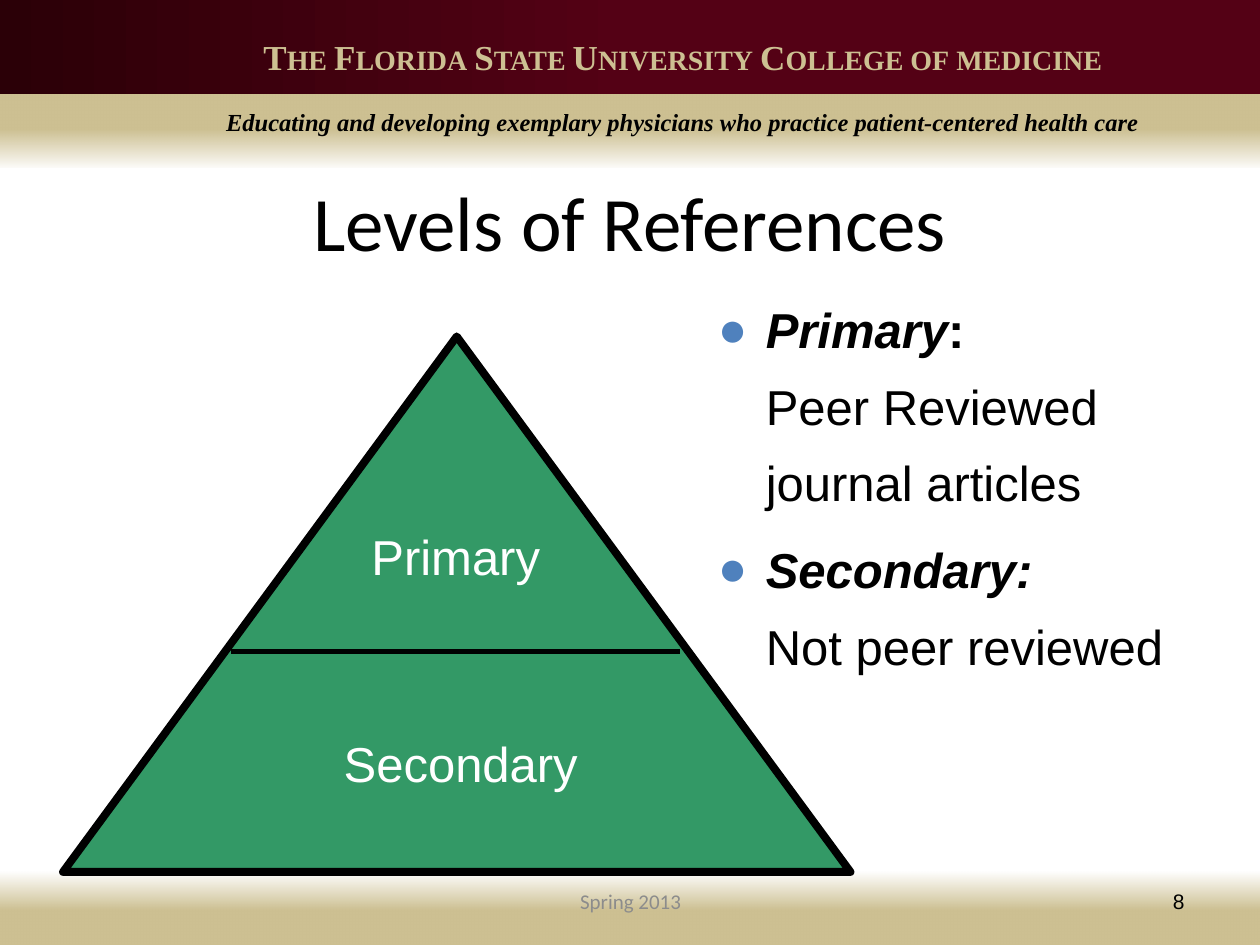
from lxml.etree import SubElement
from pptx import Presentation
from pptx.dml.color import RGBColor
from pptx.enum.shapes import MSO_CONNECTOR, MSO_SHAPE
from pptx.enum.text import MSO_ANCHOR, PP_ALIGN
from pptx.oxml import parse_xml
from pptx.oxml.ns import nsdecls, qn
from pptx.util import Inches, Pt

TAN, GREEN, BLACK, WHITE = "CDC092", "339966", "000000", "FFFFFF"
color = RGBColor.from_string


def write(shape, text, size, font, hue, align=PP_ALIGN.LEFT, anchor=MSO_ANCHOR.TOP, wrap=True):
    """Fill a shape with one uniformly formatted paragraph and return it."""
    frame = shape.text_frame
    frame.word_wrap = wrap
    frame.vertical_anchor = anchor
    para = frame.paragraphs[0]
    para.text = text
    para.alignment = align
    para.font.size = Pt(size)
    para.font.name = font
    para.font.color.rgb = color(hue)
    return para


deck = Presentation()
deck.slide_width, deck.slide_height = Inches(10), Inches(7.5)
page = deck.slides.add_slide(deck.slide_layouts[5])
shapes = page.shapes

# Full-width gradient bands: top, height, start %, start colour, end colour, end opacity %, angle
bands = [
    (0.75, 0.58, 47, TAN, TAN, 5, 90),
    (0, 0.75, 50, "540115", "2B0007", 100, 180),
    (6.92, 0.58, 47, TAN, TAN, 0, 270),
]
for top, height, start, first, last, opacity, angle in bands:
    band = shapes.add_shape(MSO_SHAPE.RECTANGLE, 0, Inches(top), Inches(10), Inches(height))
    band.shadow.inherit = False
    band.line.fill.background()
    gradient = parse_xml(
        f'<a:gradFill {nsdecls("a")} rotWithShape="1"><a:gsLst>'
        f'<a:gs pos="{start * 1000}"><a:srgbClr val="{first}"/></a:gs>'
        f'<a:gs pos="100000"><a:srgbClr val="{last}"><a:alpha val="{opacity * 1000}"/></a:srgbClr></a:gs>'
        f'</a:gsLst><a:lin ang="{angle * 60000}" scaled="0"/></a:gradFill>')
    band.fill.background()
    properties = band.fill._xPr
    properties.replace(properties.find(qn("a:noFill")), gradient)

# Header and footer text
box = shapes.add_textbox(Inches(0.42), Inches(0.23), Inches(10), Inches(0.44))
para = write(box, "The Florida State University College of medicine", 20,
             "Times New Roman", TAN, PP_ALIGN.CENTER)
para.font.bold = True
para.runs[0].font._element.set("cap", "small")

box = shapes.add_textbox(Inches(0.42), Inches(0.8), Inches(10), Inches(0.33))
para = write(box, "Educating and developing exemplary physicians who practice patient-centered health care",
             14, "Times New Roman", BLACK, PP_ALIGN.CENTER)
para.font.bold = para.font.italic = True

box = shapes.add_textbox(Inches(3.42), Inches(6.95), Inches(3.17), Inches(0.4))
write(box, "Spring 2013", 12, "Calibri", "8C8C8C", PP_ALIGN.CENTER, MSO_ANCHOR.MIDDLE)
box = shapes.add_textbox(Inches(7.17), Inches(6.95), Inches(2.33), Inches(0.4))
write(box, "8", 12, "Arial", BLACK, PP_ALIGN.RIGHT, MSO_ANCHOR.MIDDLE)

title = shapes.title
title.left, title.top, title.width, title.height = Inches(0.5), Inches(1.42), Inches(9), Inches(0.67)
write(title, "Levels of References", 44, "Calibri", BLACK, PP_ALIGN.CENTER, MSO_ANCHOR.MIDDLE)

# Definitions of the levels: term, colon in italics or not, description
levels = [
    ("Primary", False, "Peer Reviewed journal articles"),
    ("Secondary", True, "Not peer reviewed"),
]
box = shapes.add_textbox(Inches(5.6), Inches(2.19), Inches(4.4), Inches(3.3))
frame = box.text_frame
frame.word_wrap = True
for index, (term, slanted_colon, description) in enumerate(levels):
    para = frame.add_paragraph() if index else frame.paragraphs[0]
    para.line_spacing = 1.3
    para.space_before = Pt(6 if index else 0)
    settings = para._p.get_or_add_pPr()
    settings.set("marL", str(Inches(0.38)))
    settings.set("indent", str(-Inches(0.38)))
    SubElement(SubElement(settings, qn("a:buClr")), qn("a:srgbClr"), val="4F81BD")
    SubElement(settings, qn("a:buFont"), typeface="Arial")
    SubElement(settings, qn("a:buChar"), char="●")
    para.font.size = Pt(28)
    para.font.name = "Arial"
    para.font.color.rgb = color(BLACK)
    for text, bold, italic in [(term, True, True), (":", True, slanted_colon), (description, False, False)]:
        if text == description:
            para.add_line_break()
        span = para.add_run()
        span.text = text
        span.font.bold, span.font.italic = bold, italic

# Pyramid with its two levels
pyramid = shapes.add_shape(MSO_SHAPE.ISOSCELES_TRIANGLE, Inches(0.5), Inches(2.67), Inches(6.25), Inches(4.25))
pyramid.shadow.inherit = False
pyramid.fill.solid()
pyramid.fill.fore_color.rgb = color(GREEN)
pyramid.line.color.rgb = color(BLACK)
pyramid.line.width = Pt(4.5)

for label, left, top, width in [("Primary", 2.85, 4.13, 1.54), ("Secondary", 2.63, 5.77, 2.06)]:
    box = shapes.add_textbox(Inches(left), Inches(top), Inches(width), Inches(0.57))
    box.fill.solid()
    box.fill.fore_color.rgb = color(GREEN)
    write(box, label, 28, "Arial", WHITE, wrap=False)

divider = shapes.add_connector(MSO_CONNECTOR.STRAIGHT, Inches(1.83), Inches(5.17), Inches(5.4), Inches(5.17))
divider.line.color.rgb = color(BLACK)
divider.line.width = Pt(3)
SubElement(divider._element.spPr, qn("a:effectLst"))

deck.save("out.pptx")
